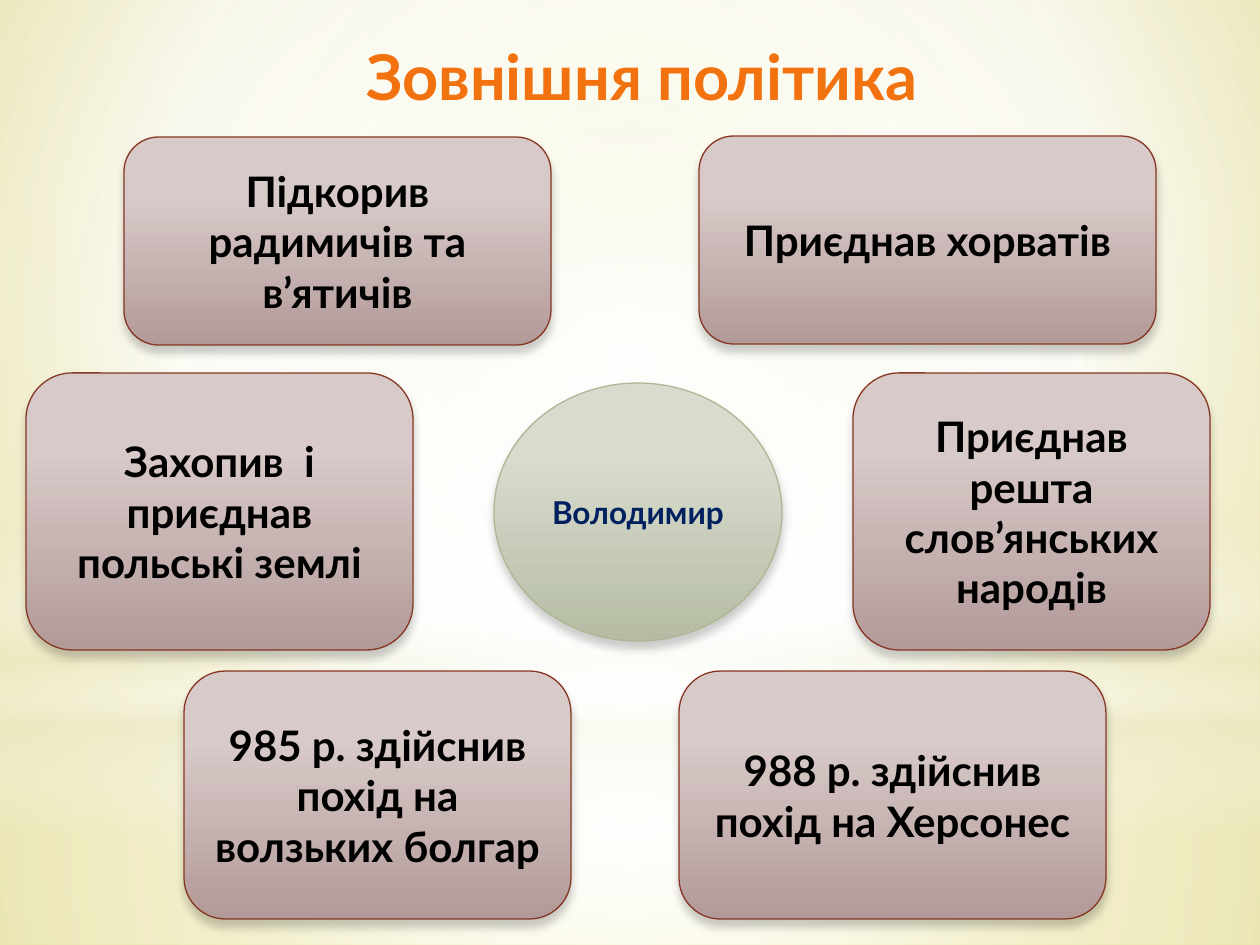
from lxml.etree import SubElement
from pptx import Presentation
from pptx.dml.color import RGBColor
from pptx.enum.shapes import MSO_SHAPE
from pptx.enum.text import MSO_ANCHOR, MSO_AUTO_SIZE, PP_ALIGN
from pptx.oxml.ns import qn
from pptx.util import Emu, Pt

SCALE = 914400 / 126  # EMU per px
FONT = "Lato"
WHITE = RGBColor(0xFF, 0xFF, 0xFF)
BLACK = RGBColor(0x00, 0x00, 0x00)
NAVY = RGBColor(0x00, 0x20, 0x60)
CREAM = RGBColor(0xEC, 0xE9, 0xC6)
PALE_YELLOW = RGBColor(0xEC, 0xE8, 0xB4)
YELLOW = RGBColor(0xE7, 0xDE, 0x77)
GREEN_LIGHT = RGBColor(0xD8, 0xDC, 0xCE)
GREEN_DARK = RGBColor(0xB5, 0xBC, 0xA3)
GREEN_LINE = RGBColor(0xAE, 0xB7, 0x95)
ROSE_LIGHT = RGBColor(0xD8, 0xCA, 0xC9)
ROSE_DARK = RGBColor(0xB2, 0x9A, 0x98)
BROWN_LINE = RGBColor(0x87, 0x36, 0x24)
ORANGE_LIGHT = RGBColor(0xFF, 0xAF, 0x7E)
ORANGE = RGBColor(0xF1, 0x72, 0x0E)
ORANGE_DARK = RGBColor(0xC0, 0x65, 0x00)
CENTRE = (50, 50, 50, 50)


def set_gradient(fill, holder, stops, focus=None):
    """Fill with (position, colour, opacity) stops: downward, or round a focus."""
    fill.solid()
    solid = holder.find(qn("a:solidFill"))
    gradient = solid.makeelement(qn("a:gradFill"), {"rotWithShape": "1"})
    holder.replace(solid, gradient)
    stop_list = SubElement(gradient, qn("a:gsLst"))
    for position, colour, opacity in stops:
        stop = SubElement(stop_list, qn("a:gs"), pos=str(position * 1000))
        tint = SubElement(stop, qn("a:srgbClr"), val=str(colour))
        if opacity < 100:
            SubElement(tint, qn("a:alpha"), val=str(opacity * 1000))
    if focus:
        circle = SubElement(gradient, qn("a:path"), path="circle")
        sides = {side: str(value * 1000) for side, value in zip("ltrb", focus)}
        SubElement(circle, qn("a:fillToRect"), sides)
    else:
        SubElement(gradient, qn("a:lin"), ang="5400000", scaled="0")


def add_gradient_shape(preset, bounds, stops, focus=None):
    shape = slide.shapes.add_shape(preset, *(Emu(round(v * SCALE)) for v in bounds))
    shape.shadow.inherit = False
    shape.line.fill.background()
    set_gradient(shape.fill, shape.element.spPr, stops, focus)
    return shape


deck = Presentation()
deck.slide_width = Emu(round(1260 * SCALE))
deck.slide_height = Emu(round(945 * SCALE))
slide = deck.slides.add_slide(deck.slide_layouts[6])

# Background
background_fill = slide.background.fill
background_fill.solid()
set_gradient(background_fill, slide.element.find(".//" + qn("p:bgPr")),
             [(0, PALE_YELLOW, 100), (60, WHITE, 100), (100, YELLOW, 100)],
             (20, 10, 20, 60))

# Soft light over the background
add_gradient_shape(MSO_SHAPE.RECTANGLE, (0, 703, 1260, 242),
                   [(0, WHITE, 91), (37, WHITE, 76), (100, CREAM, 79)], CENTRE)
add_gradient_shape(MSO_SHAPE.RECTANGLE, (0, 0, 1260, 703),
                   [(0, WHITE, 89), (48, WHITE, 62), (100, CREAM, 79)], CENTRE)
add_gradient_shape(MSO_SHAPE.RECTANGLE, (0, 519, 1260, 315),
                   [(0, WHITE, 0), (29, WHITE, 30), (45, CREAM, 40),
                    (55, WHITE, 26), (65, CREAM, 60), (100, WHITE, 0)])
add_gradient_shape(MSO_SHAPE.OVAL, (0, 220, 1260, 703),
                   [(0, WHITE, 100), (56, WHITE, 0)], CENTRE)

# Ruler in the centre, deeds around him
green = (MSO_SHAPE.OVAL, GREEN_LIGHT, GREEN_DARK, GREEN_LINE, NAVY, 18)
rose = (MSO_SHAPE.ROUNDED_RECTANGLE, ROSE_LIGHT, ROSE_DARK, BROWN_LINE, BLACK, 24)
cards = [
    ("Володимир", (494, 383, 288, 258), green),
    ("Підкорив радимичів та в’ятичів", (124, 137, 427, 208), rose),
    ("Приєднав хорватів", (699, 136, 457, 208), rose),
    ("Захопив  і приєднав польські землі", (26, 373, 387, 277), rose),
    ("Приєднав решта слов’янських народів", (853, 373, 357, 277), rose),
    ("985 р. здійснив похід на волзьких болгар", (184, 671, 387, 248), rose),
    ("988 р. здійснив похід на Херсонес", (679, 671, 427, 248), rose),
]
for text, bounds, (preset, light, dark, line_colour, text_colour, size) in cards:
    card = add_gradient_shape(preset, bounds, [(28, light, 100), (100, dark, 100)])
    card.line.color.rgb = line_colour
    card.line.width = Pt(0.75)
    effects = card.element.spPr.find(qn("a:effectLst"))
    shadow = SubElement(effects, qn("a:outerShdw"), blurRad=str(Pt(5)),
                        dist=str(Pt(4)), dir="5400000", rotWithShape="0")
    shade = SubElement(shadow, qn("a:srgbClr"), val=str(BLACK))
    SubElement(shade, qn("a:alpha"), val="20000")
    frame = card.text_frame
    frame.word_wrap = True
    frame.vertical_anchor = MSO_ANCHOR.MIDDLE
    para = frame.paragraphs[0]
    para.text = text
    para.alignment = PP_ALIGN.CENTER
    para.font.name = FONT
    para.font.size = Pt(size)
    para.font.bold = True
    para.font.color.rgb = text_colour

# Title, its line height set by the large leading space
title = slide.shapes.add_textbox(*(Emu(round(v * SCALE)) for v in (184, 0, 893, 127)))
title.text_frame.word_wrap = True
title.text_frame.auto_size = MSO_AUTO_SIZE.SHAPE_TO_FIT_TEXT
para = title.text_frame.paragraphs[0]
para.alignment = PP_ALIGN.CENTER
para.font.name = FONT
para.font.bold = True
for text, size in [(" ", 54), ("Зовнішня політика", 36)]:
    span = para.add_run()
    span.text = text
    span.font.size = Pt(size)
    set_gradient(span.font.fill, span.font.fill._xPr,
                 [(0, ORANGE_LIGHT, 100), (75, ORANGE, 100), (100, ORANGE_DARK, 100)])

deck.save("out.pptx")
